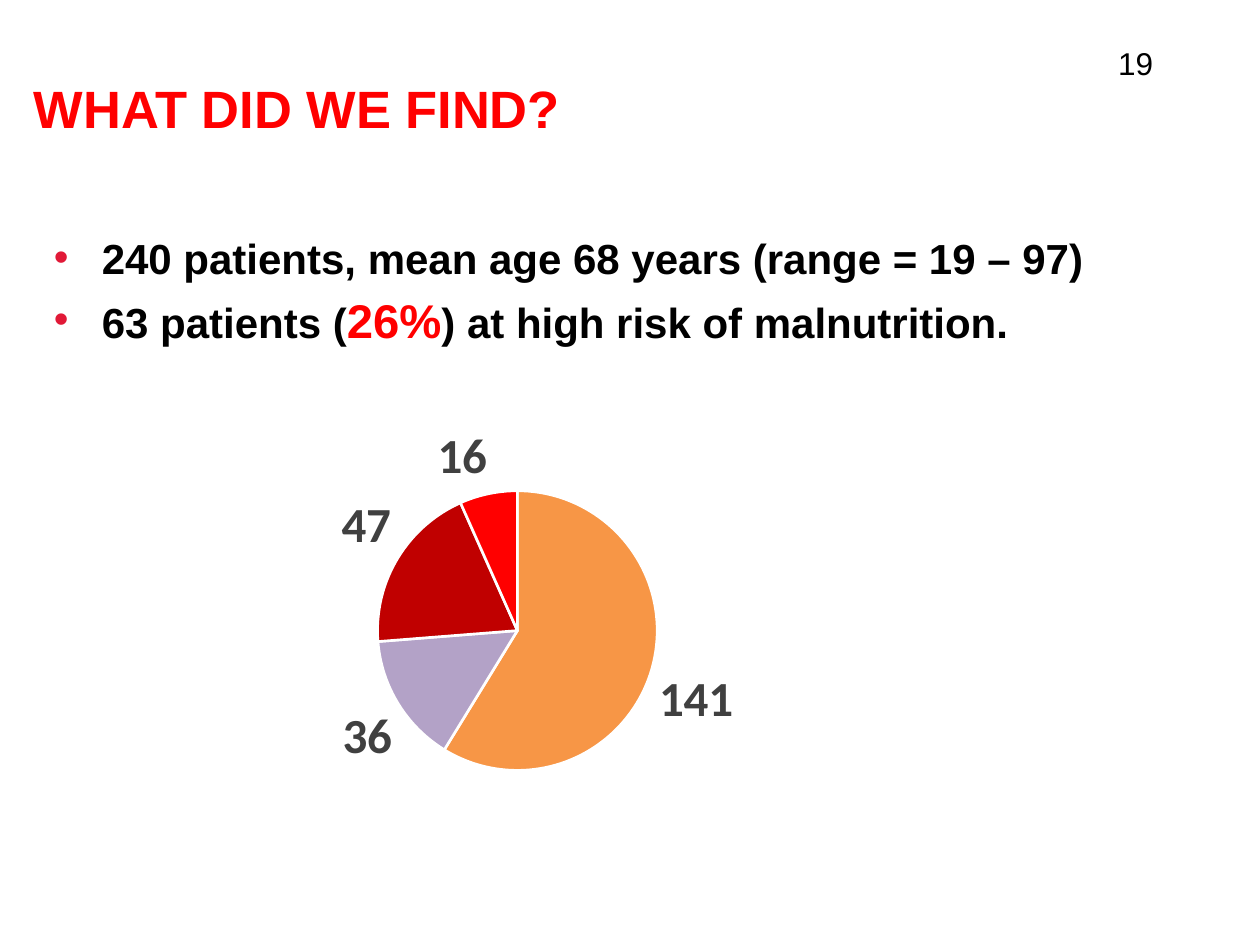
from dataclasses import dataclass

from lxml import etree
from pptx import Presentation
from pptx.chart.data import CategoryChartData
from pptx.dml.color import RGBColor
from pptx.enum.chart import XL_CHART_TYPE, XL_LABEL_POSITION
from pptx.enum.text import MSO_ANCHOR, PP_ALIGN
from pptx.oxml import parse_xml
from pptx.oxml.ns import nsdecls, qn
from pptx.util import Inches, Pt

PIE = XL_CHART_TYPE.PIE
OUTSIDE = XL_LABEL_POSITION.OUTSIDE_END
TOP, MIDDLE = MSO_ANCHOR.TOP, MSO_ANCHOR.MIDDLE
LEFT, RIGHT = PP_ALIGN.LEFT, PP_ALIGN.RIGHT


@dataclass(frozen=True)
class Theme:
    font: str = "Arial"
    chart_font: str = "Calibri"
    ink: str = "000000"
    accent: str = "FF0000"
    bullet: str = "E11937"
    label: str = "404040"
    edge: str = "FFFFFF"
    slices: tuple = ("F79646", "B3A2C7", "C00000", "FF0000")
    title: int = 30
    body: int = 24
    stress: int = 27
    number: int = 18
    value: int = 28
    gap: int = 5
    indent: float = 0.38


class Deck:
    """Places elements by shares of the slide's width and height."""

    def __init__(self, theme, width, height):
        self.theme = theme
        self.file = Presentation()
        self.file.slide_width = Inches(width)
        self.file.slide_height = Inches(height)
        self.slide = self.file.slides.add_slide(self.file.slide_layouts[6])

    def frame(self, x, y, w, h):
        wide, high = self.file.slide_width, self.file.slide_height
        return int(x * wide), int(y * high), int(w * wide), int(h * high)

    def style(self, font, size, color, bold=False, face=None):
        font.name = face or self.theme.font
        font.size = Pt(size)
        font.bold = bold
        font.color.rgb = RGBColor.from_string(color)

    def bullet(self, para):
        props = para._p.get_or_add_pPr()
        indent = Inches(self.theme.indent)
        props.set("marL", str(indent))
        props.set("indent", str(-indent))
        color = etree.SubElement(props, qn("a:buClr"))
        etree.SubElement(color, qn("a:srgbClr"), val=self.theme.bullet)
        etree.SubElement(props, qn("a:buFont"), typeface=self.theme.font)
        etree.SubElement(props, qn("a:buChar"), char="•")

    def text(self, box, paras, anchor=TOP, align=LEFT, bold=True,
             bullets=False, wrap=True):
        """Each paragraph is a list of (words, size, color) runs."""
        frame = self.slide.shapes.add_textbox(*self.frame(*box)).text_frame
        frame.word_wrap = wrap
        frame.vertical_anchor = anchor
        for i, runs in enumerate(paras):
            para = frame.add_paragraph() if i else frame.paragraphs[0]
            para.alignment = align
            if i:
                para.space_before = Pt(self.theme.gap)
            if bullets:
                self.bullet(para)
            for words, size, color in runs:
                run = para.add_run()
                run.text = words
                self.style(run.font, size, color, bold)

    def pie(self, box, plot, values):
        """Draw an unnamed pie; plot is its x, y, w, h as chart shares."""
        theme = self.theme
        source = CategoryChartData()
        source.categories = [""] * len(values)
        source.add_series("", values)
        chart = self.slide.shapes.add_chart(
            PIE, *self.frame(*box), source).chart
        chart.has_title = False
        chart.has_legend = False
        self.style(chart.font, 10, theme.ink, face=theme.chart_font)

        pie = chart.plots[0]
        pie.vary_by_categories = True
        pie.has_data_labels = True
        labels = pie.data_labels
        labels.show_value = True
        labels.show_percentage = False
        labels.position = OUTSIDE
        self.style(labels.font, theme.value, theme.label, True,
                   theme.chart_font)
        for i, color in enumerate(theme.slices):
            look = pie.series[0].points[i].format
            look.fill.solid()
            look.fill.fore_color.rgb = RGBColor.from_string(color)
            look.line.color.rgb = RGBColor.from_string(theme.edge)
            look.line.width = Pt(1.5)

        area = chart._chartSpace.find(".//" + qn("c:plotArea"))
        for old in area.findall(qn("c:layout")):
            area.remove(old)
        sizes = "".join(f'<c:{tag} val="{share}"/>'
                        for tag, share in zip("xywh", plot))
        area.insert(0, parse_xml(
            f'<c:layout {nsdecls("c")}><c:manualLayout>'
            '<c:layoutTarget val="inner"/><c:xMode val="edge"/>'
            f'<c:yMode val="edge"/>{sizes}</c:manualLayout></c:layout>'))


def main():
    theme = Theme()
    deck = Deck(theme, 10, 7.5)
    plain = theme.body, theme.ink
    deck.text((0.017, 0.04, 0.86, 0.147),
              [[("WHAT DID WE FIND?", theme.title, theme.accent)]],
              anchor=MIDDLE)
    deck.text((0.033, 0.239, 0.86, 0.51), [
        [("240 patients, mean age 68 years (range = 19 – 97)", *plain)],
        [("63 patients (", *plain),
         ("26%", theme.stress, theme.accent),
         (") at high risk of malnutrition.", *plain)],
    ], bullets=True)
    deck.pie((-0.02, 0.432, 0.888, 0.535), (0.36, 0.16, 0.25, 0.56),
             (141, 36, 47, 16))
    deck.text((0.877, 0.04, 0.048, 0.053),
              [[("19", theme.number, theme.ink)]],
              align=RIGHT, bold=False, wrap=False)
    deck.file.save("out.pptx")


if __name__ == "__main__":
    main()
